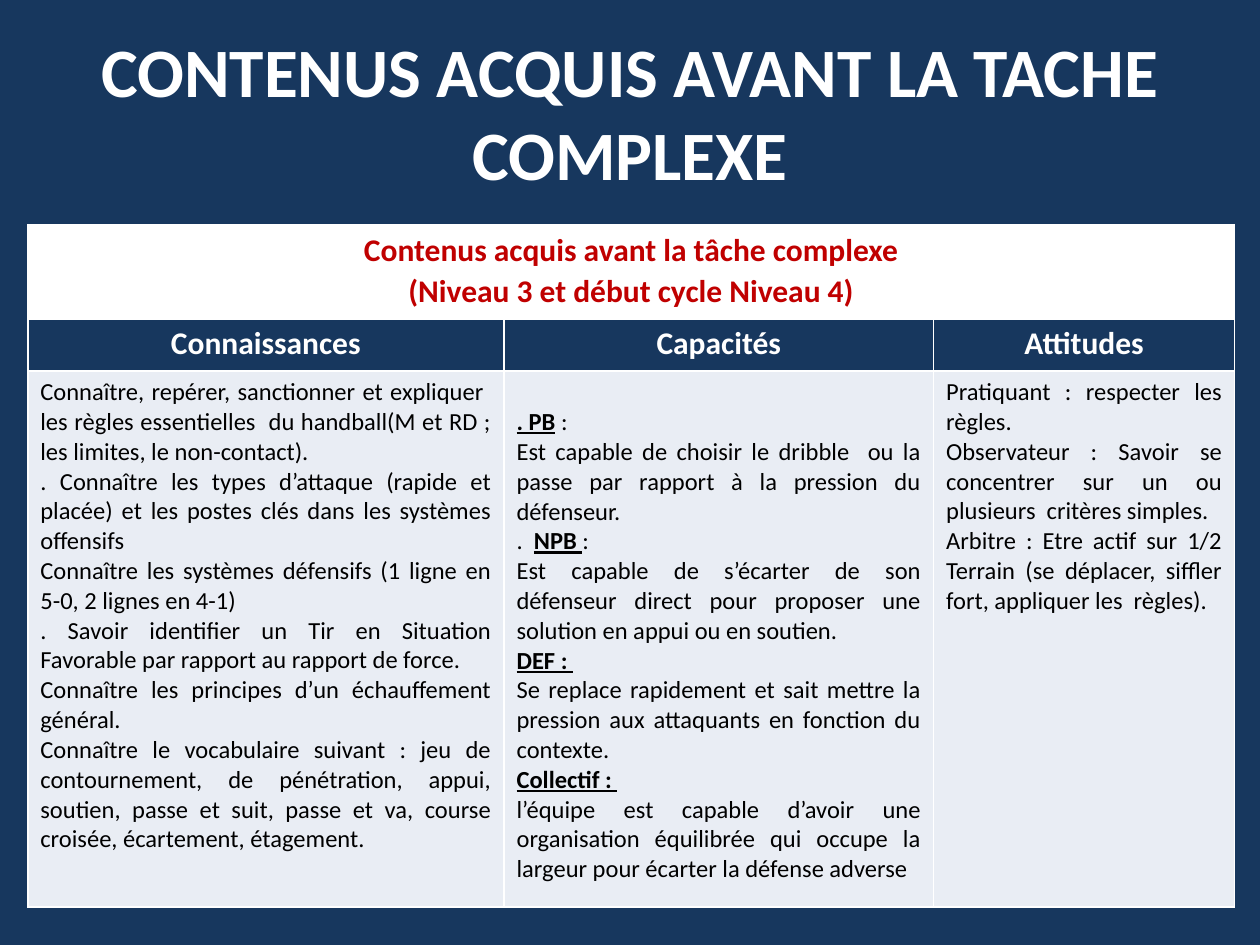
import pptx
import pptx.util
from lxml import etree
from pptx.dml.color import RGBColor
from pptx.enum.text import MSO_ANCHOR, PP_ALIGN
from pptx.oxml.ns import qn
from pptx.util import Cm, Pt

# Content: a cell is a list of paragraphs, a paragraph a list of (text, is_label)
TITLE = "CONTENUS ACQUIS AVANT LA TACHE COMPLEXE"
BANNER = ["Contenus acquis avant la tâche complexe",
          "(Niveau 3 et début cycle Niveau 4)"]
HEADERS = ["Connaissances", "Capacités", "Attitudes"]
KNOWLEDGE = [
    "Connaître, repérer, sanctionner et expliquer  les règles essentielles  du "
    "handball(M et RD ; les limites, le non-contact).",
    ". Connaître les types d’attaque (rapide et placée) et les postes clés dans "
    "les systèmes offensifs",
    "Connaître les systèmes défensifs (1 ligne en 5-0, 2 lignes en 4-1)",
    ". Savoir identifier un Tir en Situation Favorable par rapport au rapport de force.",
    "Connaître les principes d’un échauffement général.",
    "Connaître le vocabulaire suivant : jeu de contournement, de pénétration, "
    "appui, soutien, passe et suit, passe et va, course croisée, écartement, étagement.",
]
SKILLS = [
    [(". PB", True), (" :", False)],
    "Est capable de choisir le dribble  ou la passe par rapport à la pression du défenseur.",
    [(".  ", False), ("NPB ", True), (":", False)],
    "Est capable de s’écarter de son défenseur direct pour proposer une solution "
    "en appui ou en soutien.",
    [("DEF : ", True)],
    "Se replace rapidement et sait mettre la pression aux attaquants en fonction du contexte.",
    [("Collectif : ", True)],
    "l’équipe est capable d’avoir une organisation équilibrée qui occupe la "
    "largeur pour écarter la défense adverse",
]
ATTITUDES = [
    "Pratiquant : respecter les règles.",
    "Observateur : Savoir se concentrer sur un ou plusieurs  critères simples.",
    "Arbitre : Etre actif sur 1/2 Terrain (se déplacer, siffler fort, appliquer "
    "les  règles).",
]

# Style
FONT = "Calibri"
NAVY, WHITE, RED, BLACK, PALE = "17375E", "FFFFFF", "C00000", "000000", "E9EDF4"
COL_WIDTHS = [9.6, 8.66, 6.07]
ROW_HEIGHTS = [1.88, 1.07, 10.8]


def color(hex_value):
    return RGBColor.from_string(hex_value)


def add_run(p, text, size, hex_value, bold=False, underline=False):
    r = p.add_run()
    r.text = text
    r.font.name, r.font.size = FONT, Pt(size)
    r.font.bold, r.font.underline = bold, underline
    r.font.color.rgb = color(hex_value)


def set_borders(cell, bottom):
    tc_pr = cell._tc.get_or_add_tcPr()
    widths = {"a:lnL": 1, "a:lnR": 1, "a:lnT": 1, "a:lnB": bottom}
    for i, (tag, width) in enumerate(widths.items()):
        ln = etree.Element(qn(tag), w=str(Pt(width)))
        fill = etree.SubElement(ln, qn("a:solidFill"))
        etree.SubElement(fill, qn("a:srgbClr"), val=WHITE)
        tc_pr.insert(i, ln)


def fill_cell(cell, paragraphs, size, hex_value, align, bold=False):
    tf = cell.text_frame
    for i, runs in enumerate(paragraphs):
        p = tf.paragraphs[0] if i == 0 else tf.add_paragraph()
        p.alignment = align
        if isinstance(runs, str):
            runs = [(runs, False)]
        for text, label in runs:
            add_run(p, text, size, hex_value, bold or label, label)


prs = pptx.Presentation()
prs.slide_width, prs.slide_height = Cm(25.4), Cm(19.05)
s = prs.slides.add_slide(prs.slide_layouts[5])
s.background.fill.solid()
s.background.fill.fore_color.rgb = color(NAVY)

# Title
title = s.shapes.title
title.left, title.top, title.width, title.height = Cm(1.27), Cm(0.66), Cm(22.86), Cm(3.18)
tf = title.text_frame
tf.word_wrap = True
tf.vertical_anchor = MSO_ANCHOR.MIDDLE
tf.paragraphs[0].alignment = PP_ALIGN.CENTER
add_run(tf.paragraphs[0], TITLE, 39.6, WHITE, bold=True)

# Table grid
table = s.shapes.add_table(3, 3, Cm(0.56), Cm(4.53),
                           Cm(sum(COL_WIDTHS)), Cm(sum(ROW_HEIGHTS))).table
for column, width in zip(table.columns, COL_WIDTHS):
    column.width = Cm(width)
for row, height, fill, bottom in zip(table.rows, ROW_HEIGHTS, [WHITE, NAVY, PALE], [3, 1, 1]):
    row.height = Cm(height)
    for cell in row.cells:
        cell.fill.solid()
        cell.fill.fore_color.rgb = color(fill)
        set_borders(cell, bottom)

# Banner across all columns
banner = table.cell(0, 0)
banner.merge(table.cell(0, 2))
fill_cell(banner, BANNER, 18, RED, PP_ALIGN.CENTER, bold=True)
last = banner.text_frame.paragraphs[-1]
last.line_spacing, last.space_after = 1.07, Pt(8)

# Column headers and bodies
for c, (header, body) in enumerate(zip(HEADERS, [KNOWLEDGE, SKILLS, ATTITUDES])):
    fill_cell(table.cell(1, c), [header], 18, WHITE, PP_ALIGN.CENTER, bold=True)
    fill_cell(table.cell(2, c), body, 14, BLACK, PP_ALIGN.JUSTIFY)
table.cell(2, 1).margin_top = Cm(0.73)  # skills start one line lower

prs.save("out.pptx")
